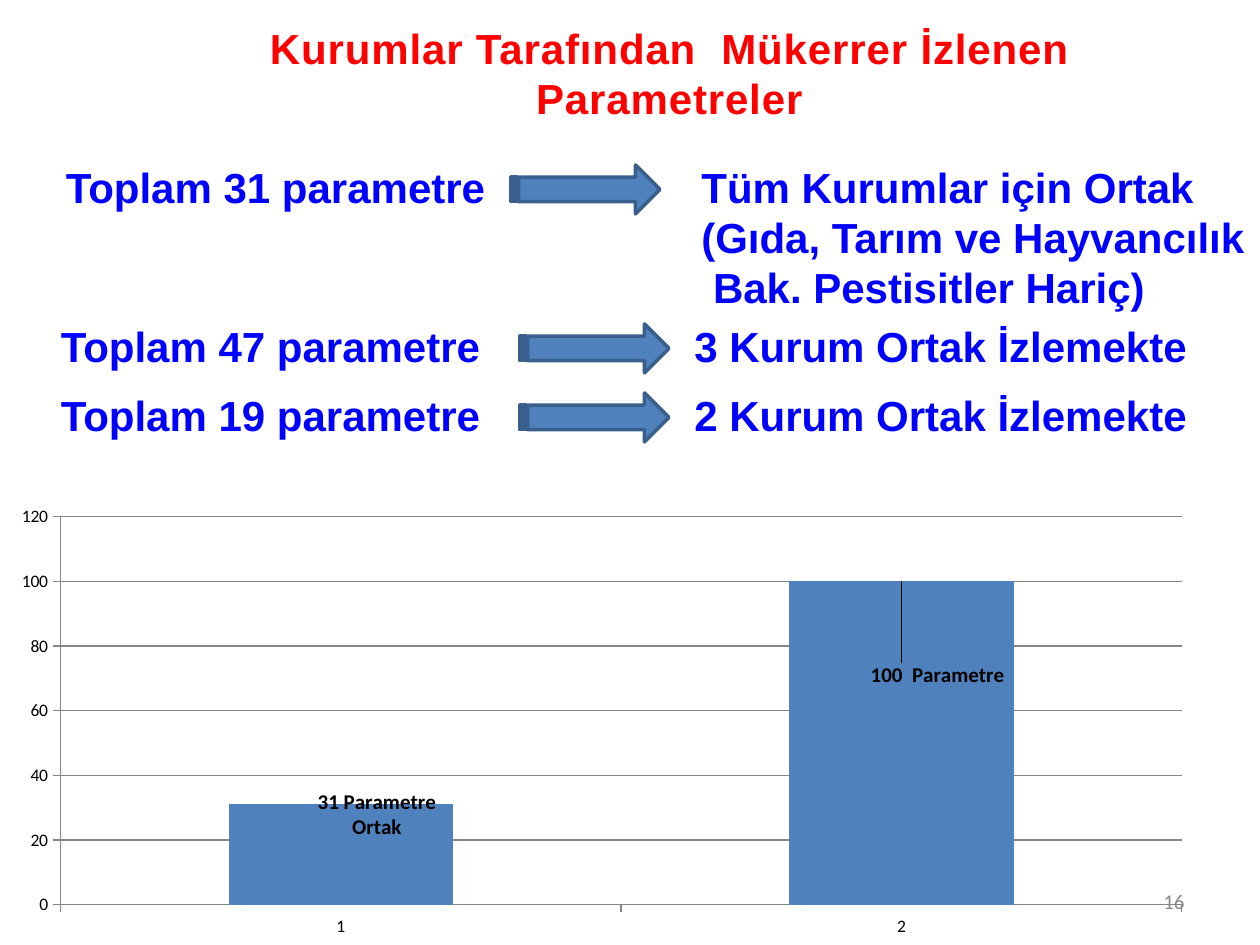
from pptx import Presentation
from pptx.chart.data import CategoryChartData
from pptx.dml.color import RGBColor
from pptx.enum.chart import XL_CHART_TYPE, XL_LABEL_POSITION, XL_TICK_MARK
from pptx.enum.shapes import MSO_SHAPE
from pptx.enum.text import MSO_ANCHOR, PP_ALIGN
from pptx.oxml import parse_xml
from pptx.oxml.ns import nsdecls, qn
from pptx.util import Emu, Pt

SCALE = 914400 / 126
BLUE, RED, BLACK, GRAY = "0000FF", "FF0000", "000000", "8C8C8C"
FILL, OUTLINE, GRID = "4F81BD", "3A5F8C", "868686"


def px(length):
    return Emu(round(length * SCALE))


def color(value):
    return RGBColor.from_string(value)


def style_font(font, size, value, name="Calibri", bold=False):
    font.size = Pt(size)
    font.name = name
    font.bold = bold
    font.color.rgb = color(value)


def add_text(slide, box, lines, align=PP_ALIGN.CENTER, size=24, value=BLUE,
             name="Arial", bold=True, wrap=True, anchor=MSO_ANCHOR.TOP, spacing=0):
    shape = slide.shapes.add_textbox(*map(px, box))
    frame = shape.text_frame
    frame.word_wrap = wrap
    frame.vertical_anchor = anchor
    for index, line in enumerate(lines):
        paragraph = frame.paragraphs[0] if index == 0 else frame.add_paragraph()
        paragraph.alignment = align
        run = paragraph.add_run()
        run.text = line
        style_font(run.font, size, value, name, bold)
        if spacing:
            run.font._element.set("spc", str(spacing))


def add_arrow(slide, left, top):
    shape = slide.shapes.add_shape(
        MSO_SHAPE.STRIPED_RIGHT_ARROW, px(left), px(top), px(149), px(49))
    shape.shadow.inherit = False
    shape.fill.solid()
    shape.fill.fore_color.rgb = color(FILL)
    shape.line.color.rgb = color(OUTLINE)
    shape.line.width = Pt(2)


def add_summary_row(slide, left, top, total, finding):
    add_text(slide, (left, top, 551, 89), [total])
    add_arrow(slide, left + 525, top + 10)
    add_text(slide, (left + 670, top, 551, 89), [finding])


def add_common_row(slide, left, top):
    add_text(slide, (left, top, 551, 89), ["Toplam 31 parametre"])
    add_arrow(slide, left + 511, top + 10)
    add_text(slide, (left + 689, top, 573, 217),
             ["Tüm Kurumlar için Ortak", "(Gıda, Tarım ve Hayvancılık",
              " Bak. Pestisitler Hariç)"], align=PP_ALIGN.LEFT, wrap=False)


def manual_layout(x, y, size=""):
    return parse_xml(
        f'<c:layout {nsdecls("c")}><c:manualLayout>{size and "<c:layoutTarget val=%r/>" % "inner"}'
        f'{size and "<c:xMode val=%r/><c:yMode val=%r/>" % ("edge", "edge")}'
        f'<c:x val="{x}"/><c:y val="{y}"/>{size}</c:manualLayout></c:layout>')


def add_parameter_chart(slide, box):
    data = CategoryChartData()
    data.categories = ["1", "2"]
    data.add_series("Series 1", [31, 100])
    chart = slide.shapes.add_chart(
        XL_CHART_TYPE.COLUMN_CLUSTERED, *map(px, box), data).chart
    chart.has_legend = False
    chart.has_title = False
    style_font(chart.font, 10, BLACK)

    value_axis, category_axis = chart.value_axis, chart.category_axis
    value_axis.minimum_scale = 0
    value_axis.maximum_scale = 120
    value_axis.major_unit = 20
    value_axis.has_major_gridlines = True
    category_axis.has_major_gridlines = False
    for axis in (value_axis, category_axis):
        axis.major_tick_mark = XL_TICK_MARK.OUTSIDE
        axis.minor_tick_mark = XL_TICK_MARK.NONE
    for part in (value_axis, category_axis, value_axis.major_gridlines):
        part.format.line.color.rgb = color(GRID)
        part.format.line.width = Pt(0.75)

    plot = chart.plots[0]
    plot.gap_width = 150
    plot.vary_by_categories = False
    series = plot.series[0]
    series.format.fill.solid()
    series.format.fill.fore_color.rgb = color(FILL)

    labels = [("31 Parametre Ortak", 0.03, 0.09), ("100  Parametre", 0.03, 0.25)]
    for index, (wording, x, y) in enumerate(labels):
        label = series.points[index].data_label
        run = label.text_frame.paragraphs[0].add_run()
        run.text = wording
        style_font(run.font, 12, BLACK, bold=True)
        label.position = XL_LABEL_POSITION.OUTSIDE_END
    for element, (_, x, y) in zip(series._element.iter(qn("c:dLbl")), labels):
        element.insert(1, manual_layout(x, y))

    plot_area = chart._chartSpace.find(".//" + qn("c:plotArea"))
    for layout in plot_area.findall(qn("c:layout")):
        plot_area.remove(layout)
    plot_area.insert(0, manual_layout(0.05, 0.04, '<c:w val="0.93"/><c:h val="0.87"/>'))


def main():
    presentation = Presentation()
    presentation.slide_width = px(1260)
    presentation.slide_height = px(945)
    slide = presentation.slides.add_slide(presentation.slide_layouts[6])

    add_text(slide, (903, 876, 294, 50), ["16"], align=PP_ALIGN.RIGHT, size=12,
             value=GRAY, name="Calibri", bold=False, anchor=MSO_ANCHOR.MIDDLE)
    add_common_row(slide, 0, 155)
    add_parameter_chart(slide, (0, 499, 1206, 446))
    add_summary_row(slide, -5, 314, "Toplam 47 parametre", "3 Kurum Ortak İzlemekte")
    add_summary_row(slide, -5, 383, "Toplam 19 parametre", "2 Kurum Ortak İzlemekte")
    add_text(slide, (253, 16, 833, 115),
             ["Kurumlar Tarafından  Mükerrer İzlenen", "Parametreler"],
             value=RED, spacing=50)
    presentation.save("out.pptx")


if __name__ == "__main__":
    main()
